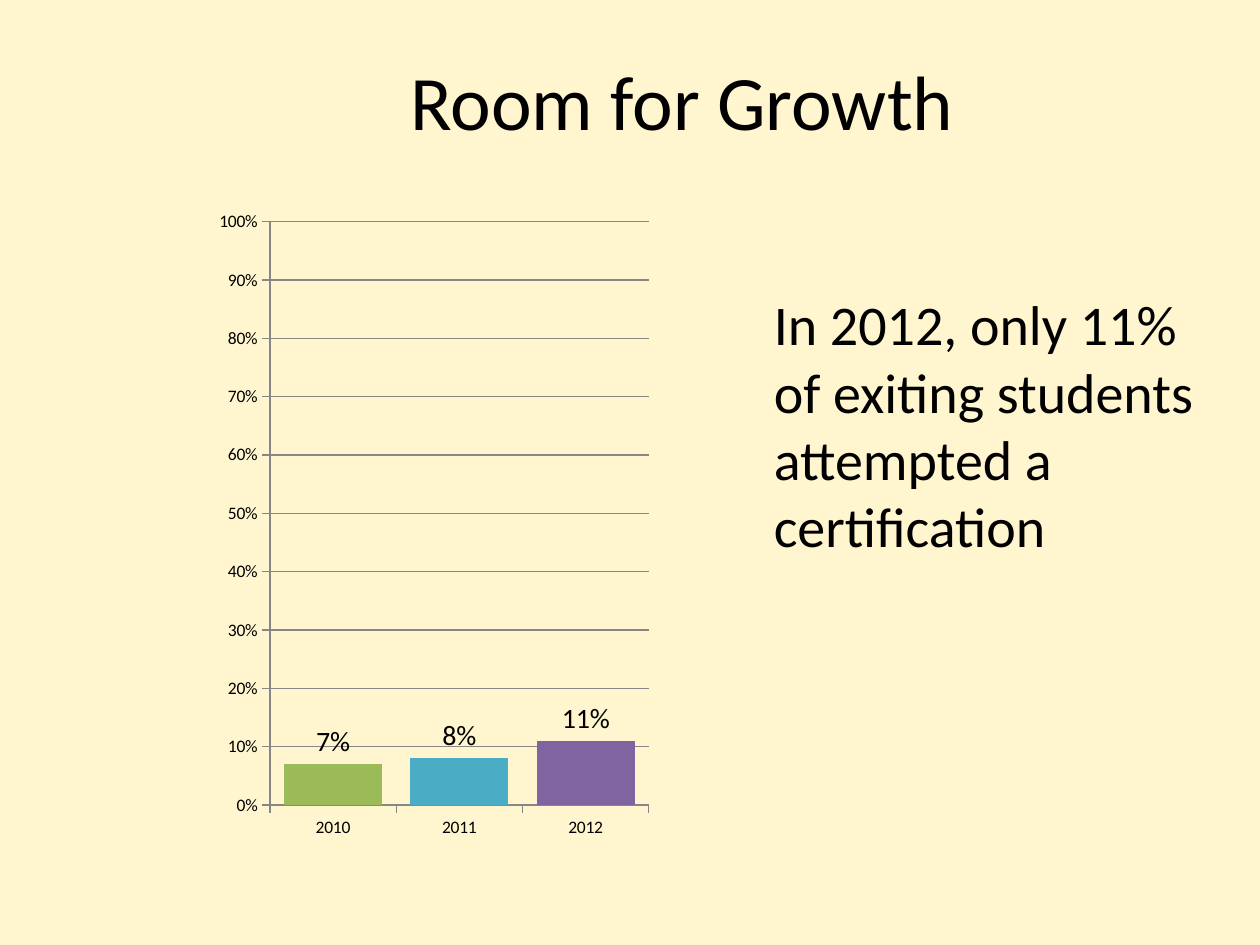
import pptx
import pptx.chart.data
import pptx.dml.color
import pptx.enum.chart
import pptx.enum.text
import pptx.util
from dataclasses import dataclass

Cm = pptx.util.Cm
Pt = pptx.util.Pt


@dataclass(frozen=True)
class Theme:
    font: str = "Calibri"
    background: str = "FFF5CF"
    text: str = "000000"
    grid: str = "868686"
    series: str = "4F81BD"
    bars: tuple = ("9BBB59", "4BACC6", "8064A2")
    title_size: int = 44
    body_size: int = 32
    label_size: int = 16
    axis_size: int = 10


THEME = Theme()


def rgb(value):
    return pptx.dml.color.RGBColor.from_string(value)


def set_font(font, size):
    font.name = THEME.font
    font.size = Pt(size)
    font.color.rgb = rgb(THEME.text)


def add_title(slide, box, text):
    sp = slide.shapes.title
    sp.left, sp.top, sp.width, sp.height = box
    tf = sp.text_frame
    tf.text = text
    tf.vertical_anchor = pptx.enum.text.MSO_ANCHOR.MIDDLE
    p = tf.paragraphs[0]
    p.alignment = pptx.enum.text.PP_ALIGN.CENTER
    set_font(p.runs[0].font, THEME.title_size)


def add_message(slide, box, text):
    tf = slide.shapes.add_textbox(*box).text_frame
    tf.word_wrap = True
    tf.margin_left = Cm(1.2)
    tf.text = text
    set_font(tf.paragraphs[0].runs[0].font, THEME.body_size)


def style_axis(axis):
    axis.major_tick_mark = pptx.enum.chart.XL_TICK_MARK.OUTSIDE
    axis.minor_tick_mark = pptx.enum.chart.XL_TICK_MARK.NONE
    axis.format.line.color.rgb = rgb(THEME.grid)
    axis.format.line.width = Pt(0.75)
    set_font(axis.tick_labels.font, THEME.axis_size)


def add_rate_chart(slide, box, rates):
    data = pptx.chart.data.CategoryChartData(number_format="0%")
    data.categories = list(rates)
    data.add_series("Series 1", list(rates.values()))
    chart = slide.shapes.add_chart(
        pptx.enum.chart.XL_CHART_TYPE.COLUMN_CLUSTERED, *box, data).chart
    chart.has_title = False
    chart.has_legend = False
    set_font(chart.font, THEME.axis_size)

    # Axes and gridlines
    style_axis(chart.category_axis)
    axis = chart.value_axis
    style_axis(axis)
    axis.minimum_scale, axis.maximum_scale, axis.major_unit = 0, 1, 0.1
    axis.tick_labels.number_format = "0%"
    axis.tick_labels.number_format_is_linked = False
    axis.has_major_gridlines = True
    axis.major_gridlines.format.line.color.rgb = rgb(THEME.grid)
    axis.major_gridlines.format.line.width = Pt(0.75)

    # Columns, one colour per year
    plot = chart.plots[0]
    plot.gap_width, plot.overlap = 29, -63
    plot.vary_by_categories = False
    series = plot.series[0]
    series.format.fill.solid()
    series.format.fill.fore_color.rgb = rgb(THEME.series)
    for i, color in enumerate(THEME.bars):
        fill = series.points[i].format.fill
        fill.solid()
        fill.fore_color.rgb = rgb(color)

    # Value labels
    labels = series.data_labels
    labels.show_value = True
    labels.number_format = "0%"
    labels.number_format_is_linked = False
    labels.position = pptx.enum.chart.XL_LABEL_POSITION.OUTSIDE_END
    set_font(labels.font, THEME.label_size)


def main():
    prs = pptx.Presentation()
    prs.slide_width, prs.slide_height = Cm(25.4), Cm(19.05)
    slide = prs.slides.add_slide(prs.slide_layouts[5])
    slide.background.fill.solid()
    slide.background.fill.fore_color.rgb = rgb(THEME.background)

    add_title(slide, (Cm(3.38), Cm(0.84), Cm(20.75), Cm(2.34)),
              "Room for Growth")
    add_message(slide, (Cm(14.4), Cm(5.72), Cm(9.96), Cm(7.42)),
                "In 2012, only 11% of exiting students attempted a certification")
    add_rate_chart(slide, (Cm(4.24), Cm(4.01), Cm(9.02), Cm(13.13)),
                   {"2010": 0.07, "2011": 0.08, "2012": 0.11})
    prs.save("out.pptx")


if __name__ == "__main__":
    main()
